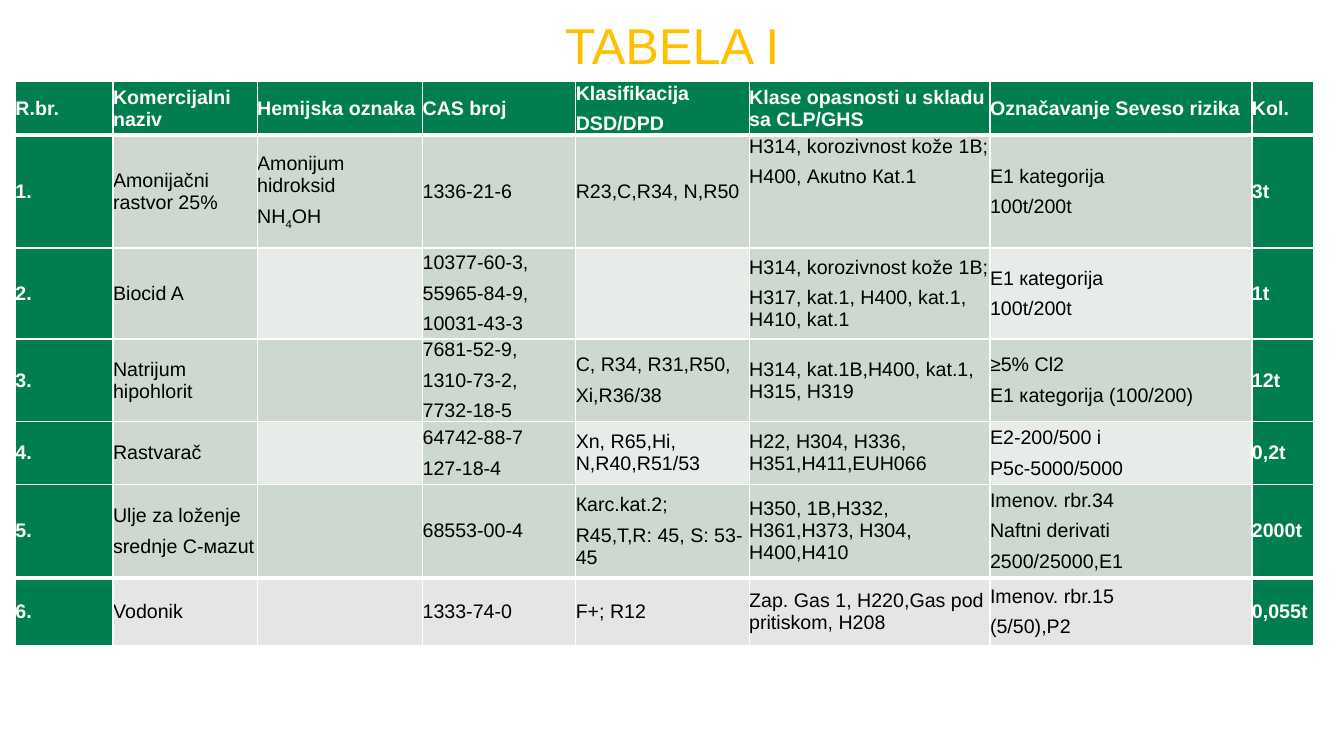
from dataclasses import dataclass

from lxml.etree import SubElement
from pptx import Presentation
from pptx.dml.color import RGBColor
from pptx.enum.text import MSO_ANCHOR, MSO_AUTO_SIZE, PP_ALIGN
from pptx.oxml.ns import qn
from pptx.util import Cm, Pt

TITLE = "TABELA I"
HEADERS = ["R.br.", "Komercijalni naziv", "Hemijska oznaka", "CAS broj",
           "Klasifikacija\nDSD/DPD", "Klase opasnosti u skladu sa CLP/GHS",
           "Označavanje Seveso rizika", "Kol."]
SUBSTANCES = [
    ["1.", "Amonijačni rastvor 25%", "Amonijum hidroksid\nNH_4_OH", "1336-21-6",
     "R23,C,R34, N,R50", "H314, korozivnost kože 1B;\nH400, Акutno Каt.1",
     "E1 kategorija\n100t/200t", "3t"],
    ["2.", "Biocid A", "", "10377-60-3,\n55965-84-9,\n10031-43-3", "",
     "H314, korozivnost kože 1B;\nH317, kat.1, H400, kat.1, H410, kat.1",
     "E1 кategorija\n100t/200t", "1t"],
    ["3.", "Natrijum hipohlorit", "", "7681-52-9,\n1310-73-2,\n7732-18-5",
     "C, R34, R31,R50,\nXi,R36/38", "H314, kat.1B,H400, kat.1, H315, H319",
     "≥5% Cl2\nE1 каtegorija (100/200)", "12t"],
    ["4.", "Rastvarač", "", "64742-88-7\n127-18-4", "Xn, R65,Hi, N,R40,R51/53",
     "H22, H304, H336, H351,H411,EUH066", "E2-200/500 i\nP5c-5000/5000", "0,2t"],
    ["5.", "Ulje za loženje\nsrednje С-маzut", "", "68553-00-4",
     "Каrc.kat.2;\nR45,T,R: 45, S: 53-45",
     "H350, 1B,H332, H361,H373, H304, H400,H410",
     "Imenov. rbr.34\nNaftni derivati\n2500/25000,Е1", "2000t"],
    ["6.", "Vodonik", "", "1333-74-0", "F+; R12",
     "Zap. Gas 1, H220,Gas pod pritiskom, H208", "Imenov. rbr.15\n(5/50),P2", "0,055t"],
]
ROWS = [HEADERS] + SUBSTANCES
COLUMN_WIDTHS = [2.46, 3.63, 4.17, 3.86, 4.37, 6.07, 6.6, 1.55]
ROW_HEIGHTS = [1.35, 2.84, 2.29, 2.08, 1.57, 2.36, 1.7]
LAST_ROW, LAST_COLUMN = len(ROWS) - 1, len(HEADERS) - 1
PALE_COLUMNS = (2, 4, 6)
TOP_ALIGNED = (1, 5)
THICK_LINES = (1, LAST_ROW)


@dataclass(frozen=True)
class Theme:
    font: str = "Arial"
    title_size: int = 36
    table_size: int = 14
    gold: str = "FFC000"
    green: str = "007E4F"
    sage: str = "CCD8D0"
    pale: str = "E7ECE9"
    grey: str = "E5E5E5"
    white: str = "FFFFFF"
    black: str = "000000"


THEME = Theme()


def write_text(frame, text, size, color, bold=False, align=PP_ALIGN.LEFT,
               space_after=0, line_spacing=1.0):
    for index, line in enumerate(text.split("\n")):
        para = frame.add_paragraph() if index else frame.paragraphs[0]
        para.alignment = align
        para.space_after = Pt(space_after)
        para.line_spacing = line_spacing
        for part, piece in enumerate(line.split("_")):
            span = para.add_run()
            span.text = piece
            span.font.name = THEME.font
            span.font.size = Pt(size)
            span.font.bold = bold
            span.font.color.rgb = RGBColor.from_string(color)
            if part % 2:
                span.font._element.set("baseline", "-25000")


def set_borders(cell, row):
    widths = {
        "a:lnL": 1,
        "a:lnR": 1,
        "a:lnT": 3 if row in THICK_LINES else 1,
        "a:lnB": 3 if row + 1 in THICK_LINES else 1,
    }
    properties = cell._tc.get_or_add_tcPr()
    for side, width in widths.items():
        line = SubElement(properties, qn(side), w=str(Pt(width)))
        fill = SubElement(line, qn("a:solidFill"))
        SubElement(fill, qn("a:srgbClr"), val=THEME.white)


def cell_fill(row, column):
    if row == 0 or column in (0, LAST_COLUMN):
        return THEME.green
    if row == LAST_ROW:
        return THEME.grey
    return THEME.pale if row % 2 == 0 and column in PALE_COLUMNS else THEME.sage


def add_title(page):
    title = page.shapes.title
    title.left, title.top, title.width, title.height = Cm(4.24), Cm(0), Cm(25.4), Cm(2.03)
    frame = title.text_frame
    frame.word_wrap = True
    frame.auto_size = MSO_AUTO_SIZE.NONE
    frame.vertical_anchor = MSO_ANCHOR.BOTTOM
    write_text(frame, TITLE, THEME.title_size, THEME.gold,
               align=PP_ALIGN.CENTER, line_spacing=0.9)


def add_substances(page):
    table = page.shapes.add_table(
        len(ROWS), len(HEADERS), Cm(0.39), Cm(2.06),
        Cm(sum(COLUMN_WIDTHS)), Cm(sum(ROW_HEIGHTS))).table
    table.horz_banding = False
    for column, width in zip(table.columns, COLUMN_WIDTHS):
        column.width = Cm(width)
    for row, height in zip(table.rows, ROW_HEIGHTS):
        row.height = Cm(height)
    for row, texts in enumerate(ROWS):
        for column, text in enumerate(texts):
            cell = table.cell(row, column)
            cell.margin_left = cell.margin_right = cell.margin_top = cell.margin_bottom = 0
            top = (row, column) == TOP_ALIGNED
            cell.vertical_anchor = MSO_ANCHOR.TOP if top else MSO_ANCHOR.MIDDLE
            set_borders(cell, row)
            color = cell_fill(row, column)
            cell.fill.solid()
            cell.fill.fore_color.rgb = RGBColor.from_string(color)
            strong = color == THEME.green
            if text:
                write_text(cell.text_frame, text, THEME.table_size,
                           THEME.white if strong else THEME.black,
                           bold=strong, space_after=6)


def main():
    deck = Presentation()
    deck.slide_width, deck.slide_height = Cm(33.87), Cm(19.05)
    page = deck.slides.add_slide(deck.slide_layouts[5])
    add_title(page)
    add_substances(page)
    deck.save("out.pptx")


if __name__ == "__main__":
    main()
